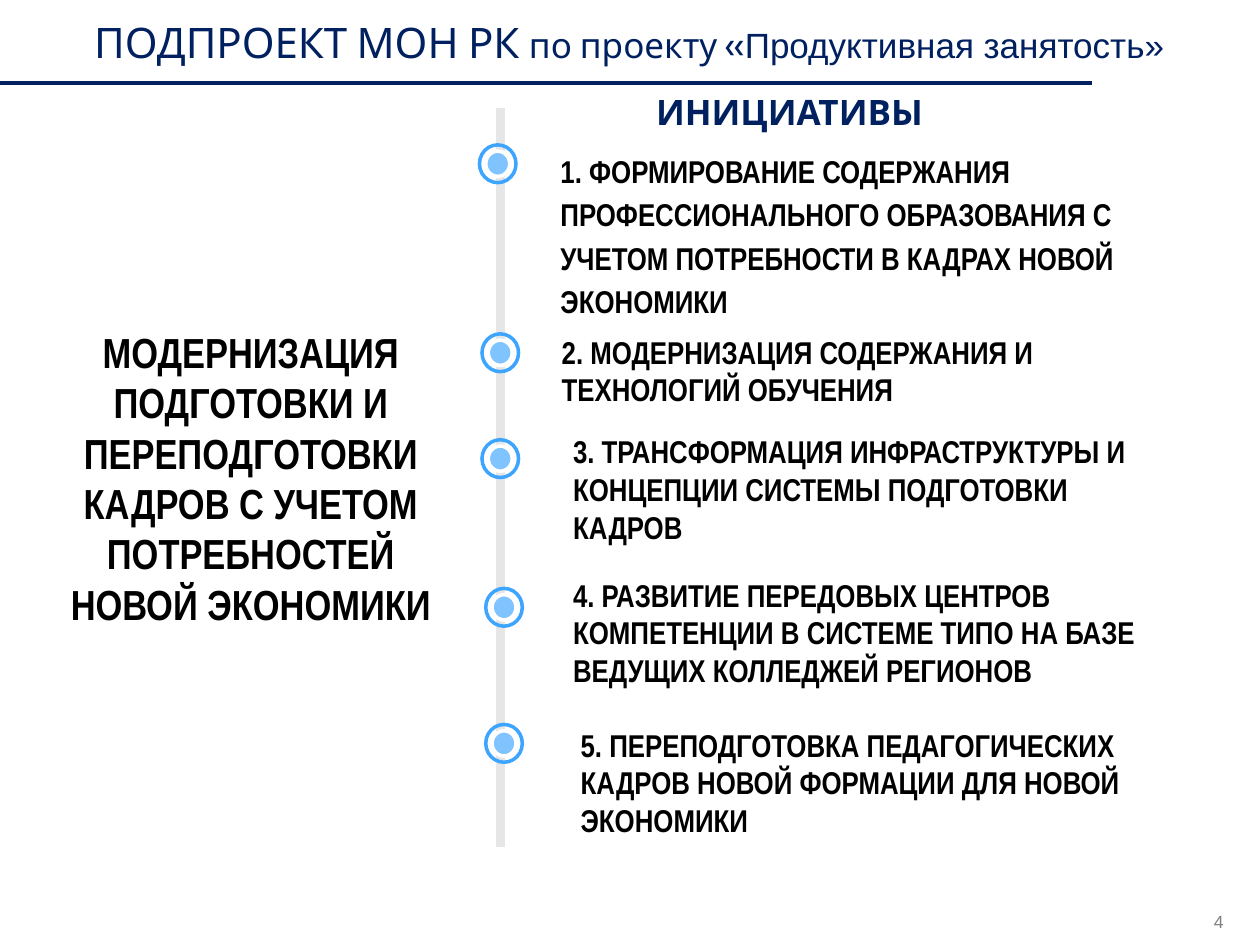
"""Builds the slide on the initiatives of the productive employment subproject."""
from dataclasses import dataclass

from lxml.etree import SubElement
from pptx import Presentation
from pptx.dml.color import RGBColor
from pptx.enum.shapes import MSO_CONNECTOR as Connector, MSO_SHAPE as Shape
from pptx.enum.text import MSO_ANCHOR as Anchor, PP_ALIGN as Align
from pptx.oxml.ns import qn
from pptx.util import Inches, Pt

COLORS = {
    "navy": "002060",
    "black": "000000",
    "white": "FFFFFF",
    "axis": "E6E6E6",
    "dot": "7FC3FF",
    "ring": "3EA5FF",
    "page": "808080",
}
NARROW = "Arial Narrow"


@dataclass(frozen=True)
class Style:
    size: float
    font: str
    color: str
    bold: bool = False
    align: Align = Align.LEFT


@dataclass(frozen=True)
class Box:
    left: float
    top: float
    width: float
    height: float


@dataclass(frozen=True)
class Initiative:
    text: str
    box: Box
    marker_x: float
    marker_y: float
    line_spacing: float = 1.0
    before: float = 3
    after: float = 6


TITLE = Style(20, "Cabin", "navy", align=Align.CENTER)
HEADING = Style(20, "Cabin", "navy", True, Align.CENTER)
GOAL = Style(24, NARROW, "black", True, Align.CENTER)
ITEM = Style(18, NARROW, "black", True)
PAGE = Style(10, "Arial", "page", align=Align.RIGHT)

INITIATIVES = [
    Initiative("1. ФОРМИРОВАНИЕ СОДЕРЖАНИЯ ПРОФЕССИОНАЛЬНОГО ОБРАЗОВАНИЯ С "
               "УЧЕТОМ ПОТРЕБНОСТИ В КАДРАХ НОВОЙ ЭКОНОМИКИ",
               Box(4.35, 1.11, 5, 1.52), 3.95, 1.3, 1.15, 0, 0),
    Initiative("2. МОДЕРНИЗАЦИЯ СОДЕРЖАНИЯ И ТЕХНОЛОГИЙ ОБУЧЕНИЯ",
               Box(4.36, 2.59, 5, 0.72), 3.97, 2.8),
    Initiative("3. ТРАНСФОРМАЦИЯ ИНФРАСТРУКТУРЫ И КОНЦЕПЦИИ СИСТЕМЫ "
               "ПОДГОТОВКИ КАДРОВ",
               Box(4.45, 3.38, 5, 1.03), 3.97, 3.64),
    Initiative("4. РАЗВИТИЕ ПЕРЕДОВЫХ ЦЕНТРОВ КОМПЕТЕНЦИИ В СИСТЕМЕ ТИПО НА "
               "БАЗЕ ВЕДУЩИХ КОЛЛЕДЖЕЙ РЕГИОНОВ",
               Box(4.45, 4.52, 5, 1.47), 4, 4.82),
    Initiative("5. ПЕРЕПОДГОТОВКА ПЕДАГОГИЧЕСКИХ КАДРОВ НОВОЙ ФОРМАЦИИ ДЛЯ "
               "НОВОЙ ЭКОНОМИКИ",
               Box(4.51, 5.71, 5, 1.03), 4, 5.9),
]


def rgb(name: str) -> RGBColor:
    """Return the named colour."""
    return RGBColor.from_string(COLORS[name])


def add_text(slide, box: Box, text: str, style: Style, inset: bool = True):
    """Add a one-paragraph text box and return its paragraph."""
    frame = slide.shapes.add_textbox(Inches(box.left), Inches(box.top),
                                     Inches(box.width), Inches(box.height)).text_frame
    frame.word_wrap = True
    frame.vertical_anchor = Anchor.TOP
    if not inset:
        frame.margin_left = frame.margin_right = 0
        frame.margin_top = frame.margin_bottom = 0
    paragraph = frame.paragraphs[0]
    paragraph.text = text
    paragraph.alignment = style.align
    font = paragraph.font
    font.size, font.name, font.bold = Pt(style.size), style.font, style.bold
    font.color.rgb = rgb(style.color)
    return paragraph


def add_filled(slide, kind: Shape, box: Box, fill: str | None, line: str) -> None:
    """Add an outlined shape, hollow when no fill is given."""
    shape = slide.shapes.add_shape(kind, Inches(box.left), Inches(box.top),
                                   Inches(box.width), Inches(box.height))
    shape.shadow.inherit = False
    if fill:
        shape.fill.solid()
        shape.fill.fore_color.rgb = rgb(fill)
    else:
        shape.fill.background()
    shape.line.color.rgb = rgb(line)
    shape.line.width = Pt(2)


def add_marker(slide, x: float, y: float) -> None:
    """Add a dot inside a ring, centred on the given point."""
    for width, height, fill, line in ((0.19, 0.2, "dot", "white"),
                                      (0.29, 0.3, None, "ring")):
        add_filled(slide, Shape.OVAL,
                   Box(x - width / 2, y - height / 2, width, height), fill, line)


def add_title(slide) -> None:
    """Add the title with its mixed fonts and the rule below it."""
    title = add_text(slide, Box(0.18, 0.13, 9.63, 0.41), "", TITLE, inset=False)
    for text, size, font in (("ПОДПРОЕКТ МОН РК ", 24, "Cabin"),
                             ("по проекту «", 20, "Cabin"),
                             ("Продуктивная занятость»", 20, "Arial")):
        run = title.add_run()
        run.text = text
        run.font.size, run.font.name = Pt(size), font
    rule = slide.shapes.add_connector(Connector.STRAIGHT, Inches(-0.04), Inches(0.66),
                                      Inches(8.67), Inches(0.66))
    rule.line.color.rgb = rgb("navy")
    rule.line.width = Pt(2.25)
    SubElement(rule._element.spPr, qn("a:effectLst"))


def main() -> None:
    """Build and save the slide."""
    deck = Presentation()
    deck.slide_width, deck.slide_height = Inches(10), Inches(7.5)
    slide = deck.slides.add_slide(deck.slide_layouts[6])
    add_title(slide)
    add_text(slide, Box(0.32, 2.54, 3.34, 2.5),
             "МОДЕРНИЗАЦИЯ ПОДГОТОВКИ И ПЕРЕПОДГОТОВКИ КАДРОВ С УЧЕТОМ "
             "ПОТРЕБНОСТЕЙ НОВОЙ ЭКОНОМИКИ", GOAL)
    add_filled(slide, Shape.RECTANGLE, Box(3.92, 0.84, 0.1, 5.9), "axis", "white")
    add_text(slide, Box(4.84, 0.67, 2.85, 0.44), "ИНИЦИАТИВЫ", HEADING)
    for item in INITIATIVES:
        paragraph = add_text(slide, item.box, item.text, ITEM)
        paragraph.line_spacing = item.line_spacing
        paragraph.space_before = Pt(item.before)
        paragraph.space_after = Pt(item.after)
        add_marker(slide, item.marker_x, item.marker_y)
    add_text(slide, Box(9.53, 7.23, 0.18, 0.17), "4", PAGE, inset=False)
    deck.save("out.pptx")


if __name__ == "__main__":
    main()
